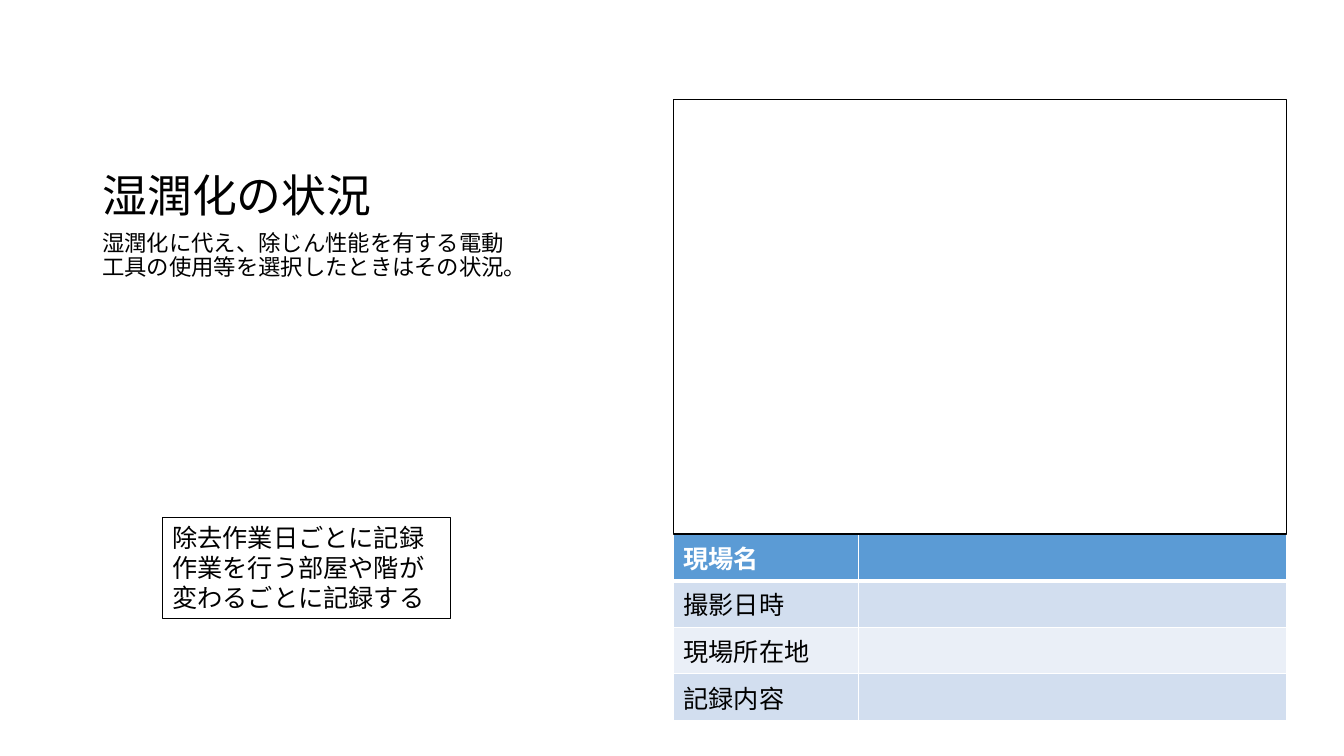
from lxml.etree import SubElement
from pptx import Presentation
from pptx.dml.color import RGBColor
from pptx.enum.shapes import MSO_SHAPE as Shape
from pptx.enum.text import MSO_ANCHOR as Anchor, MSO_AUTO_SIZE as AutoSize, PP_ALIGN as Align
from pptx.oxml.ns import qn
from pptx.util import Pt

FONT = "Noto Sans CJK JP"
TITLE = "湿潤化の状況"
BODY = "湿潤化に代え、除じん性能を有する電動工具の使用等を選択したときはその状況。"
NOTE = "除去作業日ごとに記録作業を行う部屋や階が変わるごとに記録する"
RECORD_LABELS = ["現場名", "撮影日時", "現場所在地", "記録内容"]
HEADER_FILL = "5B9BD5"
BAND_FILLS = ["D2DEEF", "EAEFF7"]

LEFT, TEXT_WIDTH = 66, 310
TITLE_TOP, TITLE_HEIGHT, BODY_HEIGHT = 36, 126, 300
PHOTO_LEFT, PHOTO_TOP, PHOTO_HEIGHT = 481, 71, 310.5
COLUMN_WIDTHS = [132.5, 305.5]
ROW_HEIGHT = 26
NOTE_BOX = (116, 369.5, 206, 72.5)


def color(value):
    return RGBColor.from_string(value)


def write(frame, text, size=18, fill="000000", bold=False, anchor=Anchor.TOP,
          spacing=1.0, before=0):
    frame.word_wrap = True
    frame.auto_size = AutoSize.NONE
    frame.vertical_anchor = anchor
    para = frame.paragraphs[0]
    para.alignment = Align.LEFT
    para.line_spacing = spacing
    para.space_before = Pt(before)
    span = para.add_run()
    span.text = text
    span.font.size = Pt(size)
    span.font.bold = bold
    span.font.name = FONT
    span.font.color.rgb = color(fill)
    SubElement(span.font._element, qn("a:ea"), typeface=FONT)


def add_frame(page, left, top, width, height, line_width):
    """Add an unfilled rectangle with a black outline."""
    box = page.shapes.add_shape(Shape.RECTANGLE, Pt(left), Pt(top), Pt(width), Pt(height))
    box.shadow.inherit = False
    box.fill.background()
    box.line.color.rgb = color("000000")
    box.line.width = Pt(line_width)
    return box


def style_cell(cell, fill, bottom_width):
    """Give a cell white borders and a solid fill."""
    properties = cell._tc.get_or_add_tcPr()
    for side, width in (("L", 1), ("R", 1), ("T", 1), ("B", bottom_width)):
        border = SubElement(properties, qn(f"a:ln{side}"), w=str(Pt(width)))
        solid = SubElement(border, qn("a:solidFill"))
        SubElement(solid, qn("a:srgbClr"), val="FFFFFF")
    cell.fill.solid()
    cell.fill.fore_color.rgb = color(fill)


def add_record_table(page, left, top):
    rows, columns = len(RECORD_LABELS), len(COLUMN_WIDTHS)
    table = page.shapes.add_table(rows, columns, Pt(left), Pt(top),
                                  Pt(sum(COLUMN_WIDTHS)), Pt(rows * ROW_HEIGHT)).table
    for column, width in zip(table.columns, COLUMN_WIDTHS):
        column.width = Pt(width)
    for index, label in enumerate(RECORD_LABELS):
        header = index == 0
        fill = HEADER_FILL if header else BAND_FILLS[(index - 1) % 2]
        for cell in table.rows[index].cells:
            style_cell(cell, fill, 3 if header else 1)
        write(table.cell(index, 0).text_frame, label, bold=header,
              fill="FFFFFF" if header else "000000")


def main():
    deck = Presentation()
    deck.slide_width, deck.slide_height = Pt(960), Pt(540)
    page = deck.slides.add_slide(deck.slide_layouts[5])

    title = page.shapes.title
    title.left, title.top = Pt(LEFT), Pt(TITLE_TOP)
    title.width, title.height = Pt(TEXT_WIDTH), Pt(TITLE_HEIGHT)
    write(title.text_frame, TITLE, size=32, anchor=Anchor.BOTTOM, spacing=0.9)

    body = page.shapes.add_textbox(Pt(LEFT), Pt(TITLE_TOP + TITLE_HEIGHT),
                                   Pt(TEXT_WIDTH), Pt(BODY_HEIGHT))
    write(body.text_frame, BODY, size=16, spacing=0.9, before=10)

    add_record_table(page, PHOTO_LEFT, PHOTO_TOP + PHOTO_HEIGHT)
    add_frame(page, PHOTO_LEFT, PHOTO_TOP, sum(COLUMN_WIDTHS), PHOTO_HEIGHT, 1)
    note = add_frame(page, *NOTE_BOX, 0.75)
    write(note.text_frame, NOTE)

    deck.save("out.pptx")


if __name__ == "__main__":
    main()
